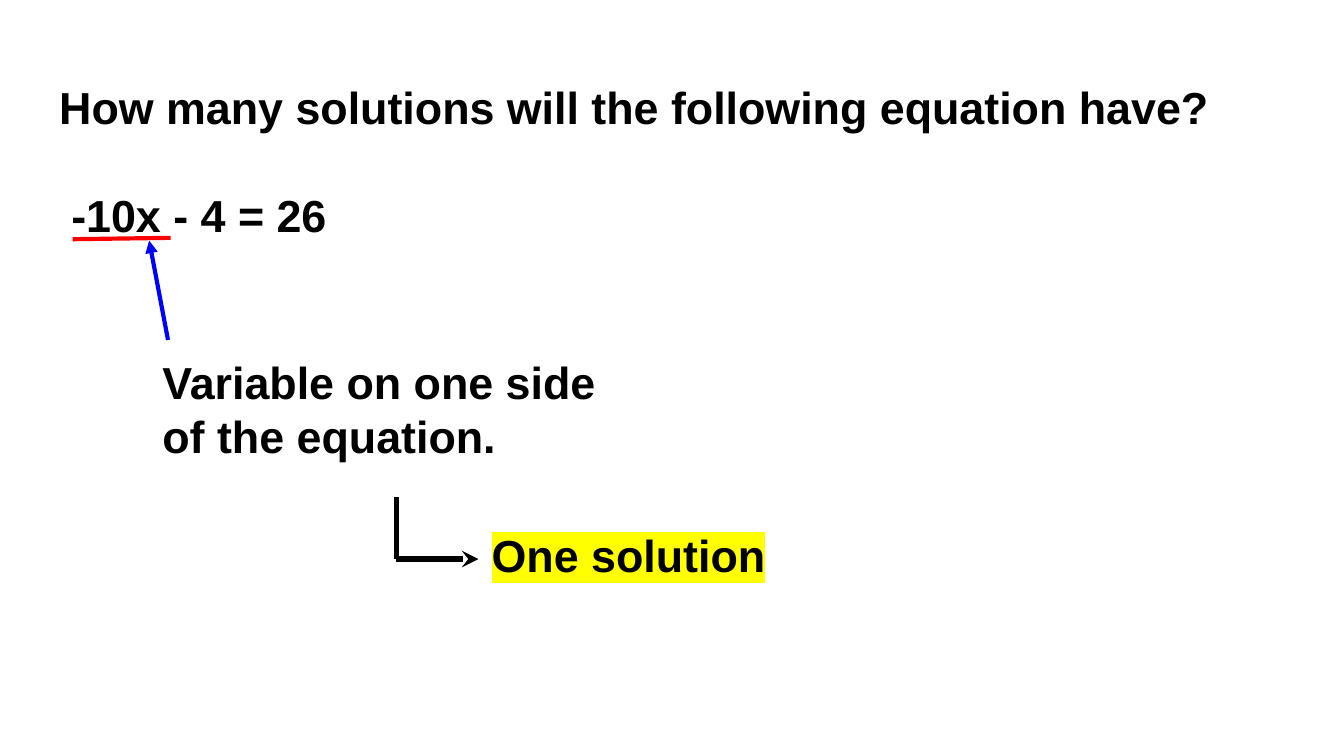
from lxml import etree
from pptx import Presentation
from pptx.dml.color import RGBColor
from pptx.enum.shapes import MSO_CONNECTOR
from pptx.enum.text import MSO_ANCHOR, MSO_AUTO_SIZE, PP_ALIGN
from pptx.oxml.ns import qn
from pptx.util import Inches, Pt

STRAIGHT = MSO_CONNECTOR.STRAIGHT
TOP, LEFT, NO_FIT = MSO_ANCHOR.TOP, PP_ALIGN.LEFT, MSO_AUTO_SIZE.NONE

COLORS = {"text": "000000", "underline": "FF0000", "pointer": "0000FF", "highlight": "FFFF00"}

# Content: wording with left, top, width, height
QUESTION = "How many solutions will the following equation have?"
EQUATION = "-10x - 4 = 26"
TITLE_AREA = (0.34, 0.49, 9.32, 0.63)
REASON = ("Variable on one side of the equation.", (1.11, 2.54, 3.68, 1.16))
ANSWER = ("One solution", (3.56, 3.83, 3.68, 0.58))

# Lines: start, end, color, width in points, arrowhead
CORNER = (2.95, 4.16)
LINES = [
    ((0.54, 1.78), (1.27, 1.77), "underline", 2.25, None),
    ((1.25, 2.53), (1.11, 1.79), "pointer", 2.25, "triangle"),
    ((2.95, 3.7), CORNER, "text", 3, None),
    (CORNER, (3.56, 4.16), "text", 3, "stealth"),
]


def write(box, area, lines):
    """Place a box and fill it with one paragraph per line."""
    box.left, box.top, box.width, box.height = map(Inches, area)
    frame = box.text_frame
    frame.text = "\n".join(lines)
    frame.word_wrap, frame.auto_size, frame.vertical_anchor = True, NO_FIT, TOP
    frame.margin_left = frame.margin_right = Inches(0.1)
    frame.margin_top = frame.margin_bottom = Inches(0.1)
    for para in frame.paragraphs:
        para.alignment = LEFT
        para.space_before = Pt(0)
        para.font.name, para.font.size, para.font.bold = "Arial", Pt(24), True
        para.font.color.rgb = RGBColor.from_string(COLORS["text"])
    return frame.paragraphs


def add_text(page, text, area):
    return write(page.shapes.add_textbox(*map(Inches, area)), area, [text])[0]


def highlight(span, color):
    """Mark a run; the highlight element must follow the run's fill."""
    span.font.color.rgb = RGBColor.from_string(COLORS["text"])
    marker = etree.Element(qn("a:highlight"))
    etree.SubElement(marker, qn("a:srgbClr"), val=color)
    span._r.rPr.find(qn("a:solidFill")).addnext(marker)


def add_line(page, start, end, color, width, arrowhead):
    line = page.shapes.add_connector(STRAIGHT, *map(Inches, start + end))
    line.line.color.rgb = RGBColor.from_string(COLORS[color])
    line.line.width = Pt(width)
    if arrowhead:
        etree.SubElement(line.line._get_or_add_ln(), qn("a:tailEnd"), type=arrowhead)
    etree.SubElement(line._element.spPr, qn("a:effectLst"))


# Widescreen page, 16:9
deck = Presentation()
deck.slide_width = Inches(10)
deck.slide_height = deck.slide_width * 9 // 16
page = deck.slides.add_slide(deck.slide_layouts[5])

# Question and equation
question, equation = write(page.shapes.title, TITLE_AREA, [QUESTION, EQUATION])
equation.space_before = Pt(29)
equation._p.get_or_add_pPr().set("marL", str(Inches(0.09)))

# Underline, pointer and elbow arrow
for line in LINES:
    add_line(page, *line)

# Reason and answer
add_text(page, *REASON)
answer = add_text(page, *ANSWER)
highlight(answer.runs[0], COLORS["highlight"])

deck.save("out.pptx")
